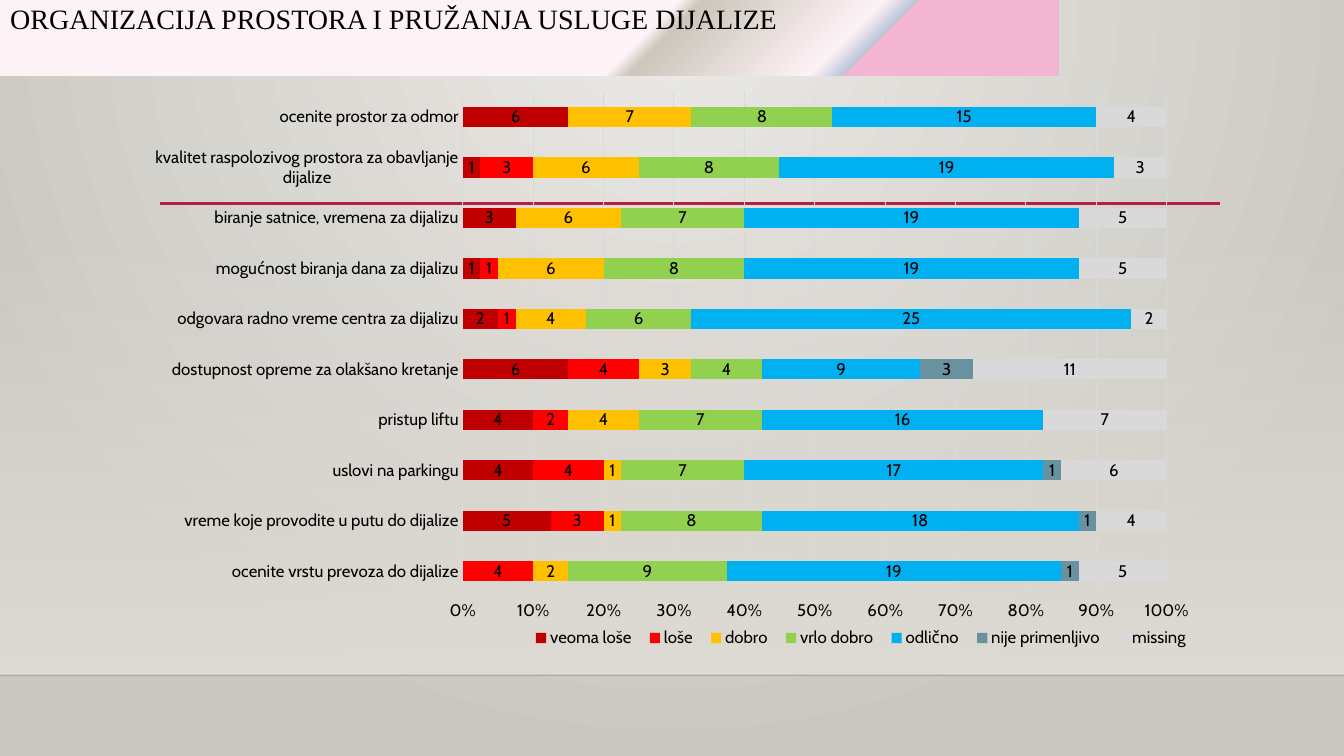
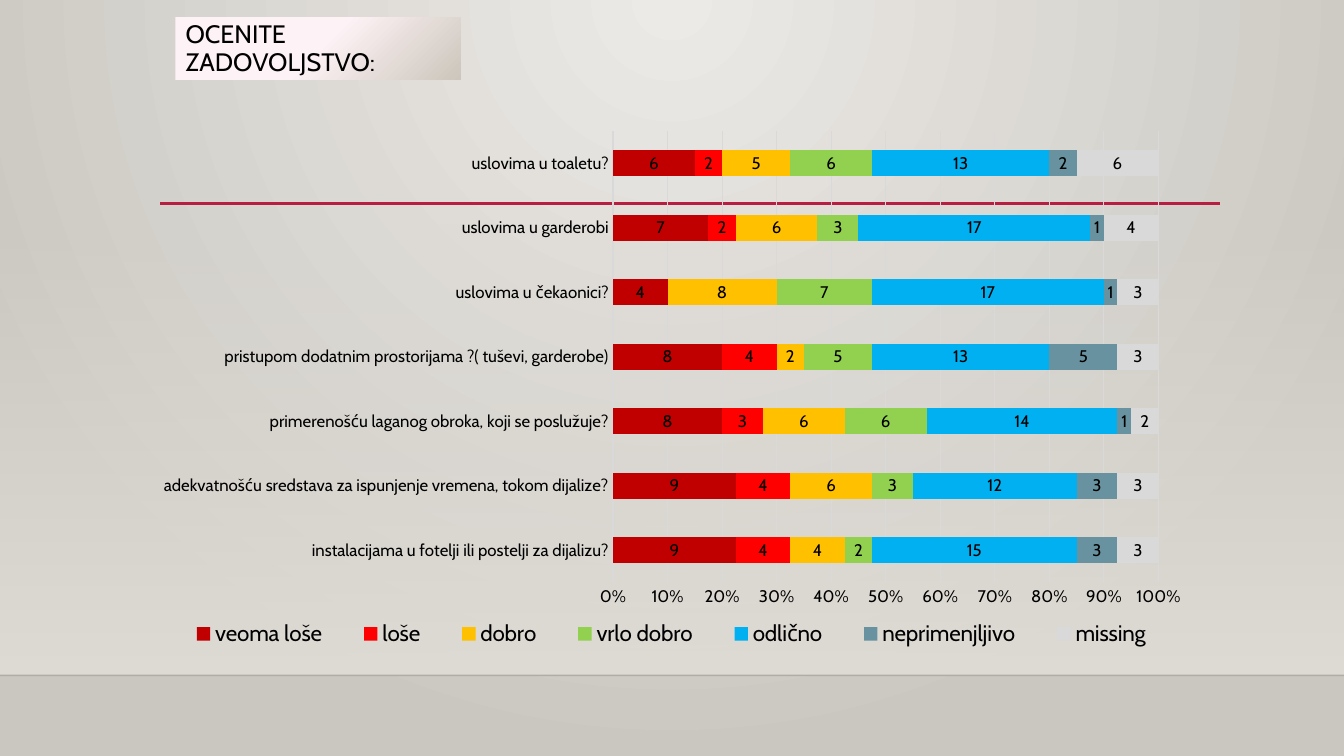
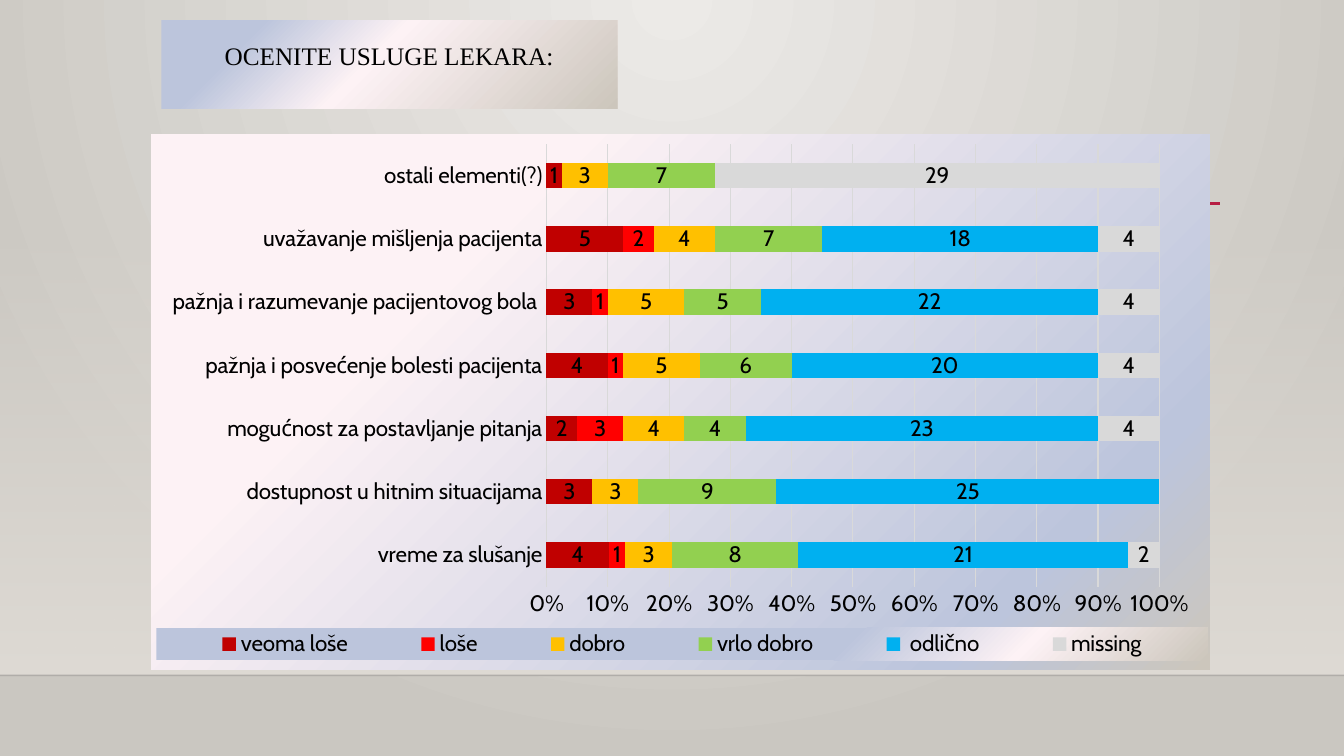
from lxml import etree
from pptx import Presentation
from pptx.chart.data import CategoryChartData
from pptx.dml.color import RGBColor
from pptx.enum.chart import XL_CHART_TYPE as ChartType, XL_LABEL_POSITION as LabelPos
from pptx.enum.chart import XL_LEGEND_POSITION as LegendPos, XL_TICK_MARK as TickMark
from pptx.enum.shapes import MSO_CONNECTOR as Connector, MSO_SHAPE as Shape
from pptx.enum.text import MSO_ANCHOR as Anchor, MSO_AUTO_SIZE as AutoSize, PP_ALIGN as Align
from pptx.oxml.ns import qn
from pptx.util import Inches, Pt

BLACK = RGBColor(0x00, 0x00, 0x00)
RULE_BLACK = RGBColor(0x00, 0x00, 0x01)
CRIMSON = RGBColor(0xB7, 0x1E, 0x42)
GRAY = RGBColor(0xD9, 0xD9, 0xD9)
SAND = RGBColor(0xDF, 0xDB, 0xD5)
PALE = RGBColor(0xEC, 0xEA, 0xE7)
STONE = RGBColor(0xCA, 0xC7, 0xC1)
BLUSH = RGBColor(0xFD, 0xF2, 0xF5)
TAUPE = RGBColor(0xCC, 0xC6, 0xBC)
LAVENDER = RGBColor(0xBC, 0xC5, 0xDC)
PINK = RGBColor(0xF2, 0xB5, 0xD2)
RATING_COLORS = [
    RGBColor(0xC0, 0x00, 0x00), RGBColor(0xFF, 0x00, 0x00), RGBColor(0xFF, 0xC0, 0x00),
    RGBColor(0x92, 0xD0, 0x50), RGBColor(0x00, 0xB0, 0xF0),
]
NOT_APPLICABLE = RGBColor(0x68, 0x92, 0xA0)
SANS, SERIF = "Cabin", "Times New Roman"
SLIDE_W, SLIDE_H = 13.33, 7.5

# Boxes are left, top, width, height in inches; gradient stops are (percent, colour).
# Ratings run from the worst to the best; rows run from the bottom of the chart up.
SURVEYS = [
    {
        "title": "ORGANIZACIJA PROSTORA I PRUŽANJA USLUGE DIJALIZE",
        "title_box": (0, 0, 10.5, 0.75),
        "title_format": {"size": 20, "face": SERIF},
        "title_stops": [(60, BLUSH), (62, TAUPE), (78, BLUSH), (81, LAVENDER), (81, PINK)],
        "chart_box": (1.5, 0.8, 10.5, 5.83),
        "plot_box": (4.59, 0.91, 6.98, 5.01),
        "legend_box": (5.19, 6.18, 6.7, 0.3),
        "sizes": {"axis": 12, "legend": 12},
        "ratings": ["veoma loše", "loše", "dobro", "vrlo dobro", "odlično",
                    "nije primenljivo", "missing"],
        "colors": RATING_COLORS + [NOT_APPLICABLE, GRAY],
        "rows": [
            ("ocenite vrstu prevoza do dijalize", (None, 4, 2, 9, 19, 1, 5)),
            ("vreme koje provodite u putu do dijalize", (5, 3, 1, 8, 18, 1, 4)),
            ("uslovi na parkingu", (4, 4, 1, 7, 17, 1, 6)),
            ("pristup liftu", (4, 2, 4, 7, 16, None, 7)),
            ("dostupnost opreme za olakšano kretanje", (6, 4, 3, 4, 9, 3, 11)),
            ("odgovara radno vreme centra za dijalizu", (2, 1, 4, 6, 25, None, 2)),
            ("mogućnost biranja dana za dijalizu", (1, 1, 6, 8, 19, None, 5)),
            ("biranje satnice, vremena za dijalizu", (3, None, 6, 7, 19, None, 5)),
            ("kvalitet raspolozivog prostora za obavljanje dijalize",
             (1, 3, 6, 8, 19, None, 3)),
            ("ocenite prostor za odmor", (6, None, 7, 8, 15, None, 4)),
        ],
    },
    {
        "title": "OCENITE ZADOVOLJSTVO:",
        "title_box": (1.74, 0.17, 2.83, 0.62),
        "title_format": {"size": 18, "face": SANS},
        "title_stops": [(50, BLUSH), (100, TAUPE), (100, PINK)],
        "chart_box": (1.42, 1.19, 10.5, 5.36),
        "plot_box": (6.08, 1.3, 5.41, 4.48),
        "legend_box": (1.61, 6.13, 10.1, 0.32),
        "sizes": {"axis": 12, "legend": 16},
        "ratings": ["veoma loše", "loše", "dobro", "vrlo dobro", "odlično",
                    "neprimenjljivo", "missing"],
        "colors": RATING_COLORS + [NOT_APPLICABLE, GRAY],
        "rows": [
            ("instalacijama u fotelji ili postelji za dijalizu?", (9, 4, 4, 2, 15, 3, 3)),
            ("adekvatnošću sredstava za ispunjenje vremena, tokom dijalize?",
             (9, 4, 6, 3, 12, 3, 3)),
            ("primerenošću laganog obroka, koji se poslužuje?", (8, 3, 6, 6, 14, 1, 2)),
            ("pristupom dodatnim prostorijama ?( tuševi, garderobe)",
             (8, 4, 2, 5, 13, 5, 3)),
            ("uslovima u čekaonici?", (4, None, 8, 7, 17, 1, 3)),
            ("uslovima u garderobi", (7, 2, 6, 3, 17, 1, 4)),
            ("uslovima u toaletu?", (6, 2, 5, 6, 13, 2, 6)),
        ],
    },
    {
        "title": "OCENITE USLUGE LEKARA:",
        "title_box": (1.6, 0.2, 4.52, 0.88),
        "title_format": {"size": 18, "face": SERIF, "align": Align.CENTER, "spacing": 1.5},
        "title_stops": [(19, LAVENDER), (46, BLUSH), (100, TAUPE)],
        "chart_box": (1.5, 1.33, 10.5, 5.31),
        "plot_box": (5.42, 1.43, 6.08, 4.39),
        "legend_box": (1.55, 6.23, 10.43, 0.32),
        "chart_stops": [(8, BLUSH), (27, BLUSH), (83, LAVENDER), (100, TAUPE)],
        "legend_stops": [(65, LAVENDER), (82, BLUSH), (100, TAUPE)],
        "sizes": {"axis": 16, "legend": 16},
        "ratings": ["veoma loše", "loše", "dobro", "vrlo dobro", " odlično", "missing"],
        "colors": RATING_COLORS + [GRAY],
        "rows": [
            ("vreme za slušanje", (4, 1, 3, 8, 21, 2)),
            ("dostupnost u hitnim situacijama", (3, None, 3, 9, 25, None)),
            ("mogućnost za postavljanje pitanja", (2, 3, 4, 4, 23, 4)),
            ("pažnja i posvećenje bolesti pacijenta", (4, 1, 5, 6, 20, 4)),
            ("pažnja i razumevanje pacijentovog bola ", (3, 1, 5, 5, 22, 4)),
            ("uvažavanje mišljenja pacijenta", (5, 2, 4, 7, 18, 4)),
            ("ostali elementi(?)", (1, None, 3, 7, None, 29)),
        ],
    },
]


def inches(values):
    return [Inches(value) for value in values]


def add_alpha(color, percent):
    etree.SubElement(color, qn("a:alpha")).set("val", str(percent * 1000))


def gradient(stops, angle=45, center=None):
    """Return a gradFill: linear, or circular around center (left, top, right, bottom)."""
    fill = etree.Element(qn("a:gradFill"), rotWithShape="1")
    stop_list = etree.SubElement(fill, qn("a:gsLst"))
    for position, color, *alpha in stops:
        stop = etree.SubElement(stop_list, qn("a:gs"), pos=str(position * 1000))
        rgb = etree.SubElement(stop, qn("a:srgbClr"), val=str(color))
        if alpha:
            add_alpha(rgb, alpha[0])
    if center:
        circle = etree.SubElement(fill, qn("a:path"))
        circle.set("path", "circle")
        edges = {side: str(share * 1000) for side, share in zip("ltrb", center)}
        etree.SubElement(circle, qn("a:fillToRect"), edges)
    else:
        etree.SubElement(fill, qn("a:lin"), ang=str(angle * 60000), scaled="0")
    return fill


def chart_fill(stops=None):
    """Return the c:spPr of a chart part: a gradient, or no fill."""
    properties = etree.Element(qn("c:spPr"))
    properties.append(gradient(stops) if stops else etree.Element(qn("a:noFill")))
    etree.SubElement(etree.SubElement(properties, qn("a:ln")), qn("a:noFill"))
    return properties


def manual_layout(box, chart_box, inner=False):
    """Return a c:layout that puts box, in slide inches, inside the chart."""
    layout = etree.Element(qn("c:layout"))
    manual = etree.SubElement(layout, qn("c:manualLayout"))
    left, top, width, height = chart_box
    shares = [("x", (box[0] - left) / width), ("y", (box[1] - top) / height),
              ("w", box[2] / width), ("h", box[3] / height)]
    settings = [("layoutTarget", "inner")] if inner else []
    settings += [("xMode", "edge"), ("yMode", "edge")]
    settings += [(key, f"{share:.4f}") for key, share in shares]
    for key, value in settings:
        etree.SubElement(manual, qn(f"c:{key}")).set("val", value)
    return layout


def style_font(font, size, face=SANS):
    font.size, font.name, font.bold = Pt(size), face, False
    font.color.rgb = BLACK


def write(frame, text, size, face=SANS, align=Align.LEFT, spacing=0.9):
    frame.word_wrap = True
    frame.auto_size = AutoSize.NONE
    frame.vertical_anchor = Anchor.TOP
    paragraph = frame.paragraphs[0]
    paragraph.alignment, paragraph.line_spacing = align, spacing
    run = paragraph.add_run()
    run.text = text
    style_font(run.font, size, face)


def add_rule(slide, left, right, y, color, width):
    ends = inches((left, y, right, y))
    rule = slide.shapes.add_connector(Connector.STRAIGHT, *ends)
    rule.line.color.rgb, rule.line.width = color, Pt(width)
    etree.SubElement(rule.element.spPr, qn("a:effectLst"))
    return rule


def dress_master(master, slide):
    """Set the background; draw the band and rules on slide and move them to the master."""
    master.background.fill.solid()
    background = master.element.find(".//" + qn("p:bgPr"))
    background.replace(background[0], gradient([(0, PALE), (100, STONE)],
                                               center=(43, 0, 43, 100)))
    band = slide.shapes.add_shape(Shape.RECTANGLE, *inches((0, 2.21, SLIDE_W, 4.49)))
    band.shadow.inherit = False
    band.element.spPr.find(qn("a:prstGeom")).addnext(
        gradient([(0, SAND, 0), (100, SAND)], angle=90))
    band.line.fill.background()
    floor = add_rule(slide, 0, SLIDE_W, 6.7, RULE_BLACK, 1)
    add_alpha(floor.element.spPr.find(".//" + qn("a:srgbClr")), 20)
    accent = add_rule(slide, 1.59, 12.1, 2.02, CRIMSON, 2.5)
    for order, part in enumerate((band, floor, accent)):
        part.element.find(".//" + qn("p:cNvPr")).set("id", str(90 + order))
        master.shapes.element.insert(2 + order, part.element)


def add_title(slide, survey):
    title = slide.shapes.title
    title.left, title.top, title.width, title.height = inches(survey["title_box"])
    title.element.spPr.append(gradient(survey["title_stops"]))
    write(title.text_frame, survey["title"], **survey["title_format"])


def style_axis(axis, size):
    axis.major_tick_mark = axis.minor_tick_mark = TickMark.NONE
    style_font(axis.tick_labels.font, size)


def style_line(line):
    line.color.rgb, line.width = GRAY, Pt(0.75)


def place(parent, layout, index):
    for old in parent.findall(qn("c:layout")):
        parent.remove(old)
    parent.insert(index, layout)


def add_ratings_chart(slide, survey):
    data = CategoryChartData()
    data.categories = [question for question, _ in survey["rows"]]
    for rating, counts in zip(survey["ratings"], zip(*(row[1] for row in survey["rows"]))):
        data.add_series(rating, counts)
    box, sizes = survey["chart_box"], survey["sizes"]
    chart = slide.shapes.add_chart(ChartType.BAR_STACKED_100, *inches(box), data).chart
    chart.has_title = False
    style_font(chart.font, sizes["axis"])

    plot = chart.plots[0]
    plot.gap_width, plot.overlap, plot.vary_by_categories = 150, 100, False
    for series, color in zip(plot.series, survey["colors"]):
        series.format.fill.solid()
        series.format.fill.fore_color.rgb = color
    plot.has_data_labels = True
    labels = plot.data_labels
    labels.show_value, labels.position = True, LabelPos.CENTER
    style_font(labels.font, sizes["axis"])

    questions, percent = chart.category_axis, chart.value_axis
    style_axis(questions, sizes["axis"])
    style_line(questions.format.line)
    style_axis(percent, sizes["axis"])
    percent.format.line.fill.background()
    percent.minimum_scale, percent.maximum_scale, percent.major_unit = 0, 1, 0.1
    percent.tick_labels.number_format = "0%"
    percent.tick_labels.number_format_is_linked = False
    style_line(percent.major_gridlines.format.line)

    chart.has_legend = True
    legend = chart.legend
    legend.position, legend.include_in_layout = LegendPos.BOTTOM, False
    style_font(legend.font, sizes["legend"])

    space = chart.element
    plot_area, key = space.find(".//" + qn("c:plotArea")), space.find(".//" + qn("c:legend"))
    place(plot_area, manual_layout(survey["plot_box"], box, inner=True), 0)
    place(key, manual_layout(survey["legend_box"], box), 1)
    plot_area.append(chart_fill())
    for part, stops in ((space, "chart_stops"), (key, "legend_stops")):
        part.find(qn("c:txPr")).addprevious(chart_fill(survey.get(stops)))


def main():
    deck = Presentation()
    deck.slide_width, deck.slide_height = inches((SLIDE_W, SLIDE_H))
    title_only = deck.slide_layouts[5]
    for number, survey in enumerate(SURVEYS):
        slide = deck.slides.add_slide(title_only)
        if number == 0:
            dress_master(deck.slide_master, slide)
        add_title(slide, survey)
        add_ratings_chart(slide, survey)
    deck.save("out.pptx")


if __name__ == "__main__":
    main()
